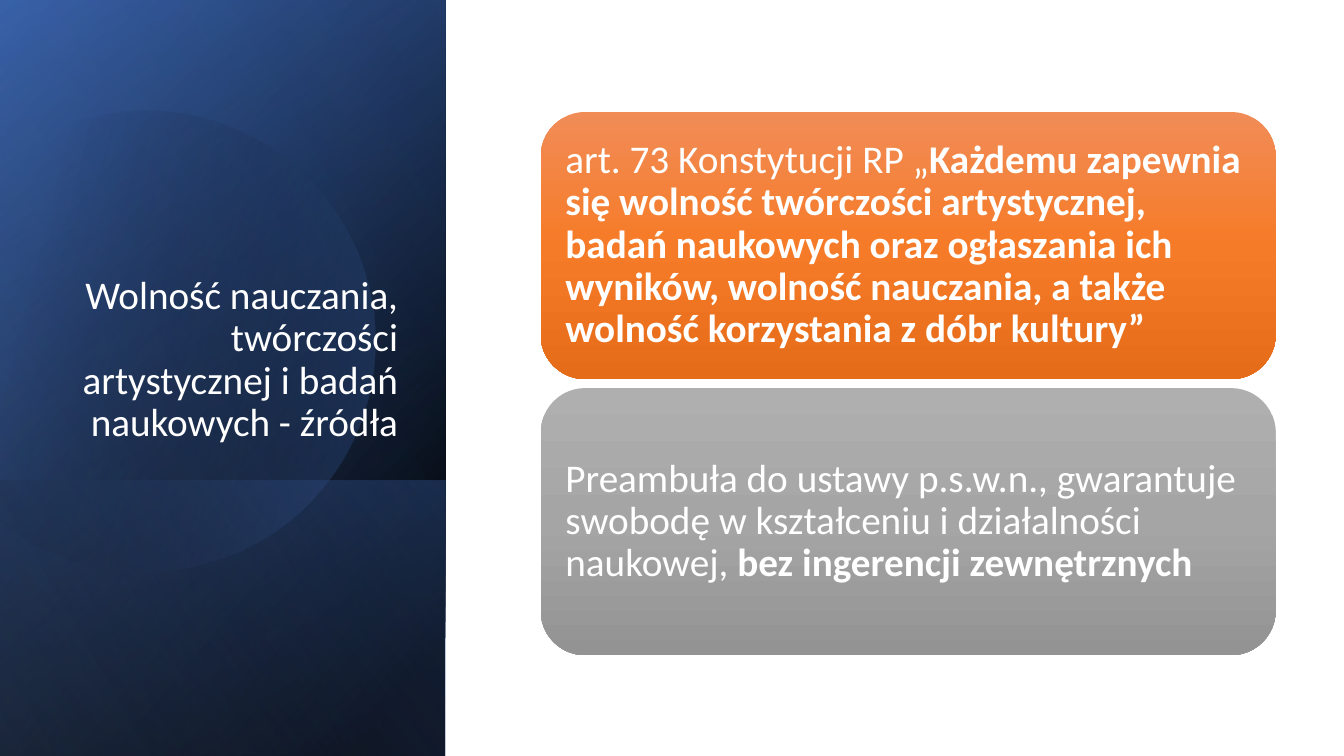
import math

from lxml import etree
from pptx import Presentation, util as u
from pptx.dml.color import RGBColor
from pptx.enum import shapes, text
from pptx.oxml import ns

WHITE = RGBColor(0xFF, 0xFF, 0xFF)
BLACK = RGBColor(0x00, 0x00, 0x00)
NAVY = RGBColor(0x2F, 0x55, 0x97)
BLUE = RGBColor(0x44, 0x72, 0xC4)
LIGHT_BLUE = RGBColor(0x8F, 0xAA, 0xDC)
ORANGES = [RGBColor(0xF1, 0x8C, 0x57), RGBColor(0xF6, 0x7B, 0x28), RGBColor(0xE5, 0x6C, 0x19)]
GREYS = [RGBColor(0xAF, 0xAF, 0xAF), RGBColor(0xA5, 0xA5, 0xA5), RGBColor(0x93, 0x93, 0x93)]
FONT = "Calibri"
PANEL_WIDTH = 318.24


def paint(shape, stops, angle):
    """Fill with a linear gradient of (position, colour, opacity) stops, all in percent."""
    shape.shadow.inherit = False
    shape.line.fill.background()
    shape.fill.gradient()
    gradient = shape.element.spPr.find(ns.qn("a:gradFill"))
    gradient.set("rotWithShape", "1")
    for child in list(gradient):
        gradient.remove(child)
    stop_list = etree.SubElement(gradient, ns.qn("a:gsLst"))
    for position, color, opacity in stops:
        stop = etree.SubElement(stop_list, ns.qn("a:gs"), pos=str(position * 1000))
        value = etree.SubElement(stop, ns.qn("a:srgbClr"), val=str(color))
        if opacity < 100:
            etree.SubElement(value, ns.qn("a:alpha"), val=str(opacity * 1000))
    etree.SubElement(gradient, ns.qn("a:lin"), ang=str(angle * 60000), scaled="0")


def add_panel(height, stops, angle):
    """Add a quarter-turned band that rises from the bottom left corner."""
    panel = slide.shapes.add_shape(
        shapes.MSO_SHAPE.RECTANGLE,
        u.Pt((PANEL_WIDTH - height) / 2), u.Pt(540 - (height + PANEL_WIDTH) / 2),
        u.Pt(height), u.Pt(PANEL_WIDTH))
    panel.rotation = 90
    panel.element.spPr.find(ns.qn("a:xfrm")).set("flipH", "1")
    paint(panel, stops, angle)


presentation = Presentation()
presentation.slide_width, presentation.slide_height = u.Pt(960), u.Pt(540)
slide = presentation.slides.add_slide(presentation.slide_layouts[5])

# Layered blue panel
add_panel(540, [(8, BLACK, 100), (100, NAVY, 100)], 50)
add_panel(540, [(0, BLACK, 0), (99, BLUE, 46)], 30)
add_panel(197, [(2, BLUE, 29), (100, BLACK, 30)], 130)

# Clipped disc: segments of one point are lines, of three points cubic curves
TILT = 343.9
LEFT, TOP, WIDTH, HEIGHT = -39.6, 76.32, 307.44, 329.04
segments = [
    [(107.28, 79.2)],
    [(177.12, 80.64), (241.2, 127.44), (261.36, 198)],
    [(286.56, 285.84), (236.16, 376.56), (149.04, 401.76)],
    [(94.32, 417.6), (38.16, 403.92), (-2.16, 370.08)],
    [(-10.8, 362.16)],
    [(-10.8, 126)],
    [(0, 115.92)],
    [(16.56, 102.24), (36, 92.16), (57.6, 85.68)],
    [(74.16, 81.36), (90.72, 79.2), (107.28, 79.2)],
]
# Turn the outline back into the frame of the tilted shape
cosine, sine = math.cos(math.radians(TILT)), math.sin(math.radians(TILT))
center_x, center_y = LEFT + WIDTH / 2, TOP + HEIGHT / 2
local = [[(WIDTH / 2 + (x - center_x) * cosine + (y - center_y) * sine,
           HEIGHT / 2 - (x - center_x) * sine + (y - center_y) * cosine) for x, y in segment]
         for segment in segments]
builder = slide.shapes.build_freeform(*local[0][0], scale=u.Pt(1))
builder.add_line_segments([segment[-1] for segment in local[1:]], close=True)
disc = builder.convert_to_shape()
disc.left, disc.top, disc.width, disc.height = u.Pt(LEFT), u.Pt(TOP), u.Pt(WIDTH), u.Pt(HEIGHT)
disc.rotation = TILT
contour = next(disc.element.iter(ns.qn("a:path")))
contour.set("w", str(u.Pt(WIDTH)))
contour.set("h", str(u.Pt(HEIGHT)))
for command, segment in zip(list(contour), local):
    if len(segment) == 3:
        command.tag = ns.qn("a:cubicBezTo")
    for child in list(command):
        command.remove(child)
    for x, y in segment:
        etree.SubElement(command, ns.qn("a:pt"), x=str(u.Pt(x)), y=str(u.Pt(y)))
paint(disc, [(29, BLACK, 0), (100, BLUE, 43)], 30)

add_panel(540, [(0, BLACK, 0), (99, LIGHT_BLUE, 11)], 120)

# Title, brought in front of the panel
title = slide.shapes.title
title.element.getparent().append(title.element)
title.left, title.top, title.width, title.height = u.Pt(46), u.Pt(132.8), u.Pt(245.5), u.Pt(188.6)
title.text_frame.text = "Wolność nauczania, twórczości artystycznej i badań naukowych - źródła"
title.text_frame.word_wrap = True
title.text_frame.auto_size = text.MSO_AUTO_SIZE.NONE
title.text_frame.vertical_anchor = text.MSO_ANCHOR.BOTTOM
paragraph = title.text_frame.paragraphs[0]
paragraph.alignment = text.PP_ALIGN.RIGHT
paragraph.line_spacing = 0.9
paragraph.font.size, paragraph.font.name = u.Pt(28), FONT
paragraph.font.color.rgb = WHITE

# Source cards
cards = [
    (ORANGES, "art. 73 Konstytucji RP „",
     "Każdemu zapewnia się wolność twórczości artystycznej, badań naukowych oraz ogłaszania "
     "ich wyników, wolność nauczania, a także wolność korzystania z dóbr kultury”"),
    (GREYS, "Preambuła do ustawy p.s.w.n., gwarantuje swobodę w kształceniu i działalności "
     "naukowej, ", "bez ingerencji zewnętrznych"),
]
for index, (colors, plain, bold) in enumerate(cards):
    card = slide.shapes.add_shape(
        shapes.MSO_SHAPE.ROUNDED_RECTANGLE,
        u.Pt(386.2), u.Pt(80 + index * 197.2), u.Pt(525), u.Pt(190.8))
    paint(card, [(step * 50, color, 100) for step, color in enumerate(colors)], 90)
    frame = card.text_frame
    frame.word_wrap = True
    frame.vertical_anchor = text.MSO_ANCHOR.MIDDLE
    frame.margin_left = frame.margin_right = frame.margin_top = frame.margin_bottom = u.Pt(8.4)
    paragraph = frame.paragraphs[0]
    paragraph.alignment = text.PP_ALIGN.LEFT
    paragraph.line_spacing = 0.9
    paragraph.space_after = u.Pt(9.8)
    paragraph.font.size, paragraph.font.name = u.Pt(28), FONT
    paragraph.font.color.rgb = WHITE
    paragraph.add_run().text = plain
    bold_run = paragraph.add_run()
    bold_run.text = bold
    bold_run.font.bold = True

presentation.save("out.pptx")
